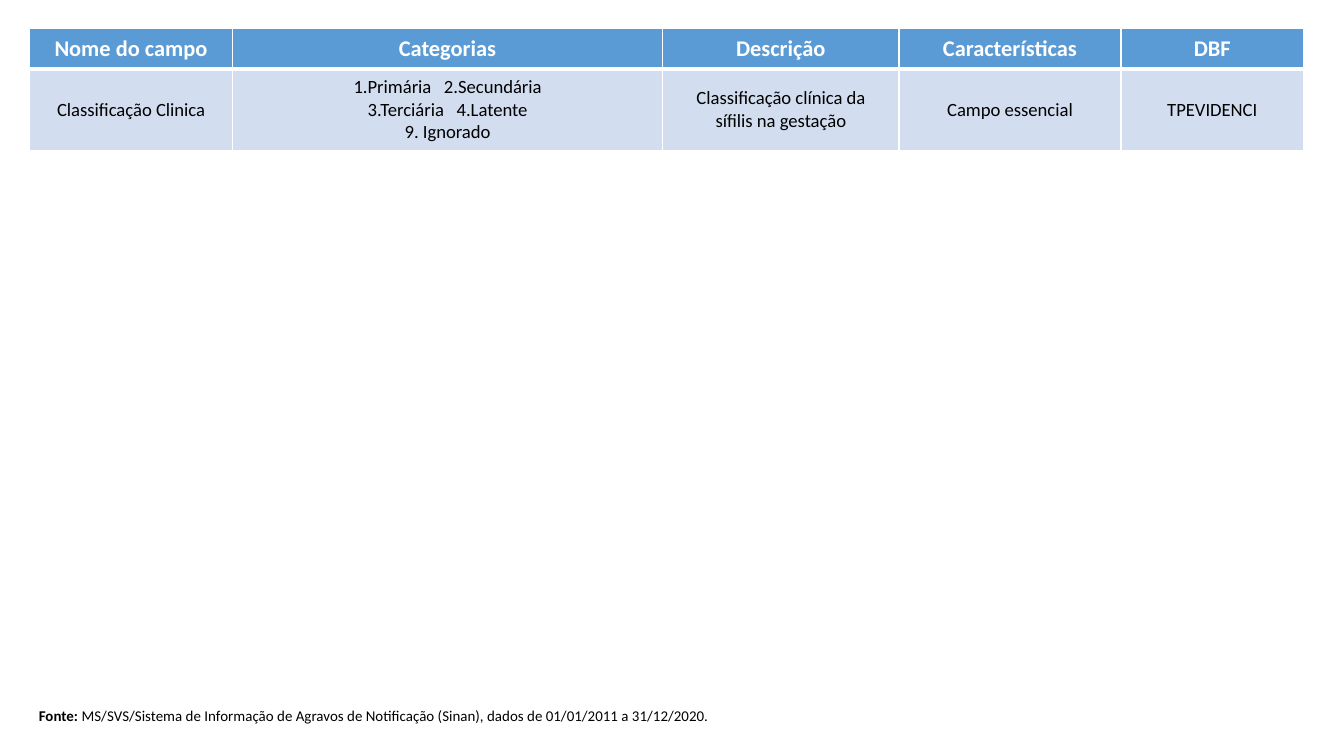
from typing import NamedTuple

from lxml.etree import SubElement
from pptx import Presentation
from pptx.dml.color import RGBColor
from pptx.enum.text import MSO_ANCHOR as Anchor, PP_ALIGN as Align
from pptx.oxml.ns import qn
from pptx.util import Inches, Pt

WHITE = RGBColor(0xFF, 0xFF, 0xFF)
BLACK = RGBColor(0, 0, 0)
BLUE = RGBColor(0x5B, 0x9B, 0xD5)
PALE = RGBColor(0xD2, 0xDE, 0xEF)
FONT = "Calibri"
GAP = " "  # a run of its own, widened by character spacing


class Field(NamedTuple):
    head: str
    lines: list  # one list of runs per paragraph
    width: float


class Style(NamedTuple):
    fill: RGBColor
    color: RGBColor
    size: int
    bold: bool
    base: int  # bottom border, points


FIELDS = [
    Field("Nome do campo", [["Classificação Clinica"]], 1.51),
    Field("Categorias", [["1.Primária", GAP, "2.Secundária"],
                         ["3.Terciária", GAP, "4.Latente"],
                         ["9. Ignorado"]], 3.2),
    Field("Descrição", [["Classificação clínica da sífilis na gestação"]], 1.76),
    Field("Características", [["Campo essencial"]], 1.65),
    Field("DBF", [["TPEVIDENCI"]], 1.36),
]
HEAD = Style(BLUE, WHITE, 12, True, 3)
BODY = Style(PALE, BLACK, 10, False, 1)


def write(para, text: str, *, size: int, color: RGBColor, bold: bool = False,
          align: Align = Align.LEFT) -> None:
    para.alignment = align
    run = para.add_run()
    run.text = text
    run.font.name, run.font.size, run.font.bold = FONT, Pt(size), bold
    run.font.color.rgb = color
    if text == GAP:
        run._r.get_or_add_rPr().set("spc", "450")


def edge(cell, side: str, width: int) -> None:
    line = SubElement(cell._tc.get_or_add_tcPr(), qn(f"a:ln{side}"), w=str(Pt(width)))
    fill = SubElement(line, qn("a:solidFill"))
    SubElement(fill, qn("a:srgbClr"), val=str(WHITE))


def fill_cell(cell, lines: list, style: Style) -> None:
    # Borders must come before the fill in the cell properties
    for side in "LRT":
        edge(cell, side, 1)
    edge(cell, "B", style.base)
    cell.fill.solid()
    cell.fill.fore_color.rgb = style.fill
    cell.vertical_anchor = Anchor.MIDDLE
    frame = cell.text_frame
    for i, runs in enumerate(lines):
        para = frame.add_paragraph() if i else frame.paragraphs[0]
        for text in runs:
            write(para, text, size=style.size, color=style.color,
                  bold=style.bold, align=Align.CENTER)


def add_fields(slide) -> None:
    width = sum(field.width for field in FIELDS)
    table = slide.shapes.add_table(2, len(FIELDS), Inches(0.22), Inches(0.21),
                                   Inches(width), Inches(0.9)).table
    table.rows[0].height = Inches(0.29)
    table.rows[1].height = Inches(0.53)
    for col, field in enumerate(FIELDS):
        table.columns[col].width = Inches(field.width)
        fill_cell(table.cell(0, col), [[field.head]], HEAD)
        fill_cell(table.cell(1, col), field.lines, BODY)


def add_credit(slide) -> None:
    box = slide.shapes.add_textbox(Inches(0.19), Inches(5.21), Inches(5.38), Inches(0.24))
    box.text_frame.word_wrap = True
    para = box.text_frame.paragraphs[0]
    write(para, "Fonte: ", size=8, color=BLACK, bold=True)
    write(para, "MS/SVS/Sistema de Informação de Agravos de Notificação (Sinan), "
          "dados de 01/01/2011 a 31/12/2020.", size=8, color=BLACK)


def main() -> None:
    deck = Presentation()
    # Widescreen, 16:9
    deck.slide_width = Inches(10)
    deck.slide_height = deck.slide_width * 9 // 16
    slide = deck.slides.add_slide(deck.slide_layouts[6])
    # Field table, then the source line at the foot
    add_fields(slide)
    add_credit(slide)
    deck.save("out.pptx")


if __name__ == "__main__":
    main()
